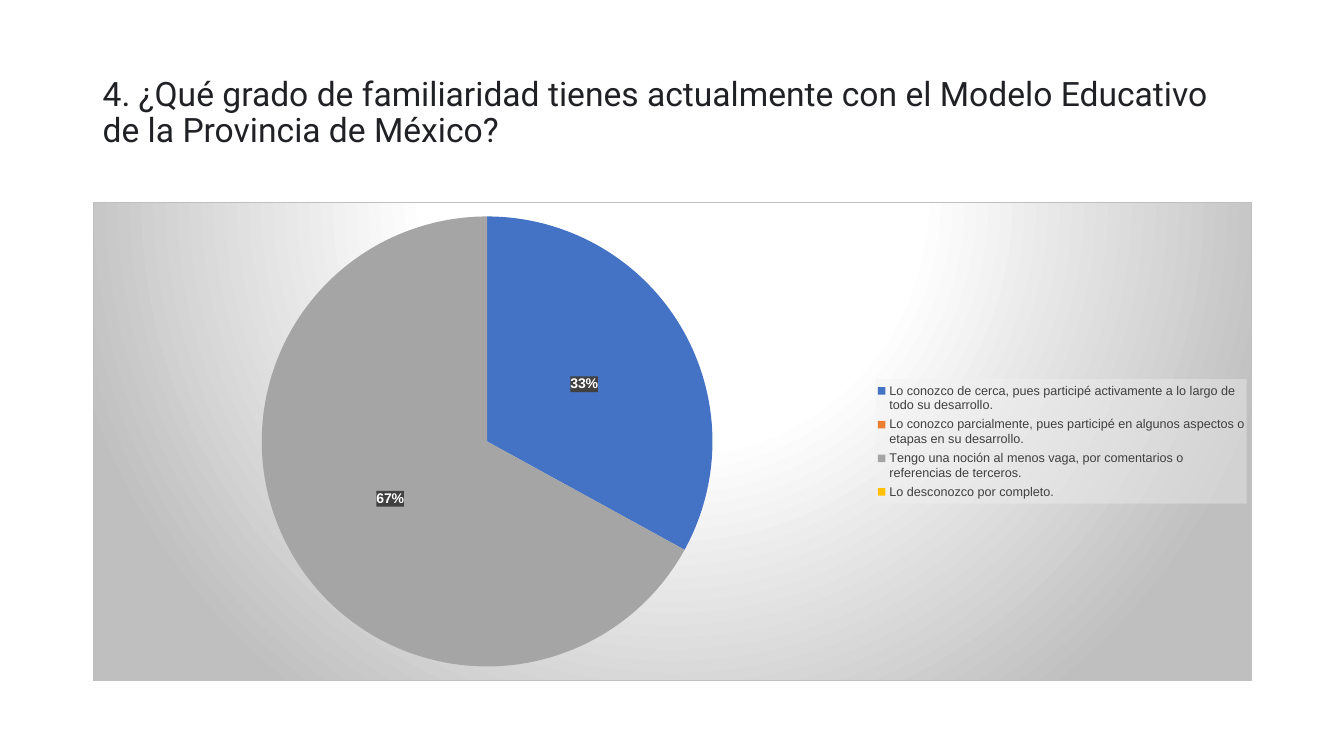
from lxml import etree
from pptx import Presentation
from pptx.chart.data import CategoryChartData
from pptx.dml.color import RGBColor
from pptx.enum.chart import XL_CHART_TYPE, XL_LABEL_POSITION, XL_LEGEND_POSITION
from pptx.enum.text import MSO_ANCHOR
from pptx.oxml import parse_xml
from pptx.oxml.ns import nsdecls, qn
from pptx.util import Inches, Pt

PIE = XL_CHART_TYPE.PIE
CENTER = XL_LABEL_POSITION.CENTER
RIGHT = XL_LEGEND_POSITION.RIGHT
MIDDLE = MSO_ANCHOR.MIDDLE

QUESTION = ("4. ¿Qué grado de familiaridad tienes actualmente con el "
            "Modelo Educativo de la Provincia de México?")
# Answer, percentage, slice colour
ANSWERS = [
    ("Lo conozco de cerca, pues participé activamente a lo largo de todo su desarrollo.",
     33, "4472C4"),
    ("Lo conozco parcialmente, pues participé en algunos aspectos o etapas en su desarrollo.",
     0, "ED7D31"),
    ("Tengo una noción al menos vaga, por comentarios o referencias de terceros.",
     67, "A5A5A5"),
    ("Lo desconozco por completo.", 0, "FFC000"),
]

BACKGROUND = """
<a:gradFill rotWithShape="1">
  <a:gsLst>
    <a:gs pos="0"><a:srgbClr val="FFFFFF"/></a:gs>
    <a:gs pos="39000"><a:srgbClr val="FFFFFF"/></a:gs>
    <a:gs pos="100000"><a:srgbClr val="BFBFBF"/></a:gs>
  </a:gsLst>
  <a:path path="circle"><a:fillToRect l="50000" t="-80000" r="50000" b="180000"/></a:path>
</a:gradFill>
<a:ln w="9525"><a:solidFill><a:srgbClr val="BFBFBF"/></a:solidFill></a:ln>"""


def rgb(value):
    return RGBColor.from_string(value)


def style_font(font, name, size, color, bold=False):
    font.name = name
    font.size = Pt(size)
    font.bold = bold
    font.color.rgb = rgb(color)


def clear_fill(color, percent):
    return (f'<a:solidFill><a:srgbClr val="{color}"><a:alpha val="{percent * 1000}"/>'
            '</a:srgbClr></a:solidFill><a:ln><a:noFill/></a:ln>')


def add_chart_format(element, content):
    """Put shape formatting just before the text formatting of a chart part."""
    format_xml = f'<c:spPr {nsdecls("c", "a")}>{content}</c:spPr>'
    element.find(qn("c:txPr")).addprevious(parse_xml(format_xml))


def set_layout(element, x, y, w, h, inner=False):
    """Place a chart part by fractions of the chart's size."""
    for old in element.findall(qn("c:layout")):
        element.remove(old)
    layout = etree.Element(qn("c:layout"))
    manual = etree.SubElement(layout, qn("c:manualLayout"))
    settings = [("layoutTarget", "inner")] if inner else []
    settings += [("xMode", "edge"), ("yMode", "edge"),
                 ("x", x), ("y", y), ("w", w), ("h", h)]
    for tag, value in settings:
        etree.SubElement(manual, qn(f"c:{tag}")).set("val", str(value))
    if inner:
        element.insert(0, layout)
    else:
        element.find(qn("c:legendPos")).addnext(layout)


def hide_label(labels, index):
    labels.insert(index, parse_xml(
        f'<c:dLbl {nsdecls("c")}><c:idx val="{index}"/><c:delete val="1"/></c:dLbl>'))


def add_title(slide, text):
    sp = slide.shapes.add_textbox(Inches(0.92), Inches(0.4), Inches(11.5), Inches(1.45))
    tf = sp.text_frame
    tf.word_wrap = True
    tf.vertical_anchor = MIDDLE
    tf.text = text
    p = tf.paragraphs[0]
    p.line_spacing = 0.9
    style_font(p.runs[0].font, "Roboto", 24, "202124")


def add_answer_pie(slide, answers):
    data = CategoryChartData()
    data.categories = [answer for answer, _, _ in answers]
    data.add_series("Series 1", [value for _, value, _ in answers])
    chart = slide.shapes.add_chart(PIE, Inches(0.92), Inches(2), Inches(11.5),
                                   Inches(4.76), data).chart
    chart.has_title = False
    style_font(chart.font, "Arial", 10, "000000")
    space = chart.element if hasattr(chart, "element") else chart._chartSpace
    add_chart_format(space, BACKGROUND)
    set_layout(space.find(".//" + qn("c:plotArea")), 0.14, 0.03, 0.4, 0.94, inner=True)

    # Slices
    plot = chart.plots[0]
    plot.vary_by_categories = True
    series = plot.series[0]
    for i, (_, _, color) in enumerate(answers):
        fill = series.points[i].format.fill
        fill.solid()
        fill.fore_color.rgb = rgb(color)

    # Percentage labels, only on slices that have a size
    labels = series.data_labels
    labels.show_percentage = True
    labels.show_value = False
    labels.number_format = "0%"
    labels.number_format_is_linked = False
    labels.position = CENTER
    style_font(labels.font, "Arial", 10, "FFFFFF", bold=True)
    labels_xml = space.find(".//" + qn("c:ser")).find(qn("c:dLbls"))
    add_chart_format(labels_xml, clear_fill("404040", 90))
    empty = [i for i, (_, value, _) in enumerate(answers) if value == 0]
    for position, index in enumerate(empty):
        hide_label(labels_xml, index)
        labels_xml.insert(position, labels_xml[index])

    # Legend
    chart.has_legend = True
    legend = chart.legend
    legend.position = RIGHT
    legend.include_in_layout = False
    style_font(legend.font, "Arial", 9, "404040")
    legend_xml = space.find(".//" + qn("c:legend"))
    set_layout(legend_xml, 0.68, 0.37, 0.32, 0.26)
    add_chart_format(legend_xml, clear_fill("F2F2F2", 39))


def main():
    prs = Presentation()
    prs.slide_width = Inches(13.33)
    prs.slide_height = Inches(7.5)
    slide = prs.slides.add_slide(prs.slide_layouts[6])
    add_title(slide, QUESTION)
    add_answer_pie(slide, ANSWERS)
    prs.save("out.pptx")


if __name__ == "__main__":
    main()
